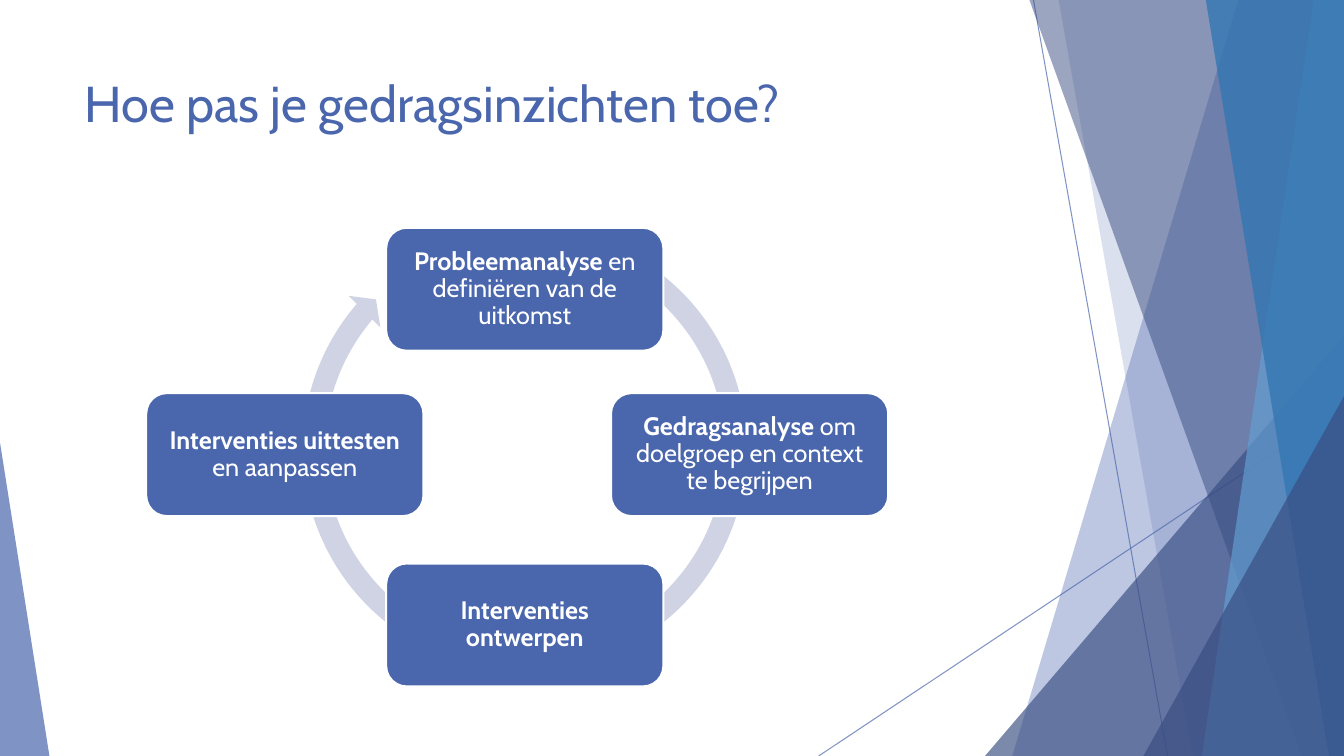
import pptx
import pptx.dml.color
import pptx.enum.shapes
import pptx.enum.text
import pptx.oxml
import pptx.oxml.ns
import pptx.util

SHAPE = pptx.enum.shapes.MSO_SHAPE
ALIGN = pptx.enum.text.PP_ALIGN
ANCHOR = pptx.enum.text.MSO_ANCHOR
AUTO_SIZE = pptx.enum.text.MSO_AUTO_SIZE
PIXEL = 9144
WIDTH, HEIGHT = 1333, 750
COLOURS = {
    "blue": "4A66AC",
    "navy": "384C81",
    "sky": "629DD1",
    "ocean": "3477B2",
    "pale": "D0D3E3",
    "white": "FFFFFF",
}


def scaled(*lengths):
    return [pptx.util.Emu(length * PIXEL) for length in lengths]


class SlideBuilder:
    font_name = "Cabin"

    def __init__(self, page):
        self.page = page

    def apply(self, target, values):
        for name, value in values.items():
            setattr(target, name, value)

    def colour(self, name):
        return pptx.dml.color.RGBColor.from_string(COLOURS[name])

    def paint(self, fill, name, opacity=100):
        fill.solid()
        fill.fore_color.rgb = self.colour(name)
        if opacity < 100:
            tag = pptx.oxml.ns.qn("a:srgbClr")
            for element in fill._xPr.iter(tag):
                alpha = pptx.oxml.parse_xml(
                    f'<a:alpha {pptx.oxml.ns.nsdecls("a")} val="{opacity * 1000}"/>'
                )
                element.append(alpha)

    def finish(self, shape, name, opacity=100):
        shape.shadow.inherit = False
        shape.line.fill.background()
        self.paint(shape.fill, name, opacity)

    def line(self, start, end):
        straight = pptx.enum.shapes.MSO_CONNECTOR.STRAIGHT
        line = self.page.shapes.add_connector(straight, *scaled(*start, *end))
        line.line.width = pptx.util.Pt(0.75)
        self.paint(line.line.fill, "blue", 70)
        effects = f'<a:effectLst {pptx.oxml.ns.nsdecls("a")}/>'
        line._element.spPr.append(pptx.oxml.parse_xml(effects))

    def band(self, top_left, bottom_left, name, opacity):
        outline = self.page.shapes.build_freeform(top_left, 0, scale=PIXEL)
        corners = [(WIDTH, 0), (WIDTH, HEIGHT), (bottom_left, HEIGHT)]
        outline.add_line_segments(corners, close=True)
        self.finish(outline.convert_to_shape(), name, opacity)

    def shape(self, kind, bounds, name, opacity=100, adjustments=()):
        shape = self.page.shapes.add_shape(kind, *scaled(*bounds))
        for index, value in enumerate(adjustments):
            shape.adjustments[index] = value
        self.finish(shape, name, opacity)
        return shape

    def span(self, para, text, size, name, bold=False):
        span = para.add_run()
        span.text = text
        values = {"name": self.font_name, "size": pptx.util.Pt(size), "bold": bold}
        self.apply(span.font, values)
        span.font.color.rgb = self.colour(name)

    def title(self, text, bounds):
        title = self.page.shapes.title
        edges = ("left", "top", "width", "height")
        self.apply(title, dict(zip(edges, scaled(*bounds))))
        values = {
            "word_wrap": True,
            "vertical_anchor": ANCHOR.TOP,
            "auto_size": AUTO_SIZE.NONE,
        }
        self.apply(title.text_frame, values)
        para = title.text_frame.paragraphs[0]
        para.alignment = ALIGN.LEFT
        self.span(para, text, 36, "blue")

    def step(self, left, top, strong, plain):
        box = self.shape(SHAPE.ROUNDED_RECTANGLE, (left, top, 275, 122), "blue")
        self.paint(box.line.fill, "white")
        box.line.width = pptx.util.Pt(1.5)
        values = {"word_wrap": True, "vertical_anchor": ANCHOR.MIDDLE}
        for side in ("left", "right", "top", "bottom"):
            values[f"margin_{side}"] = scaled(7)[0]
        self.apply(box.text_frame, values)
        para = box.text_frame.paragraphs[0]
        self.apply(para, {"alignment": ALIGN.CENTER, "line_spacing": 0.9})
        self.span(para, strong, 18, "white", True)
        if plain:
            self.span(para, plain, 18, "white")


def main():
    deck = pptx.Presentation()
    deck.slide_width, deck.slide_height = scaled(WIDTH, HEIGHT)
    slide = SlideBuilder(deck.slides.add_slide(deck.slide_layouts[5]))

    slide.line((1025, 0), (1158, HEIGHT))
    slide.line((WIDTH, 403), (812, HEIGHT))
    slide.band(1228, 1004, "blue", 36)
    slide.band(1050, 1183, "blue", 20)
    slide.shape(SHAPE.ISOSCELES_TRIANGLE, (977, 333, 356, 417), "navy", 66, [1])
    slide.band(1021, 1291, "navy", 50)
    slide.band(1303, 1192, "sky", 70)
    slide.band(1196, 1318, "ocean", 80)
    slide.shape(SHAPE.ISOSCELES_TRIANGLE, (1134, 393, 199, 357), "navy", 66, [1])
    slide.shape(SHAPE.ISOSCELES_TRIANGLE, (0, 439, 49, 311), "blue", 70, [0])

    slide.title("Hoe pas je gedragsinzichten toe?", (74, 67, 940, 144))
    slide.shape(
        SHAPE.CIRCULAR_ARROW,
        (289, 214, 463, 463),
        "pale",
        adjustments=[0.047, 2.729, 132.369, 177.609, 0.048],
    )
    steps = [
        (383, 226, "Probleemanalyse", " en definiëren van de uitkomst"),
        (606, 390, "Gedragsanalyse ", "om doelgroep en context te begrijpen"),
        (383, 559, "Interventies ontwerpen", ""),
        (145, 390, "Interventies uittesten", " en aanpassen"),
    ]
    for step in steps:
        slide.step(*step)
    deck.save("out.pptx")


if __name__ == "__main__":
    main()
